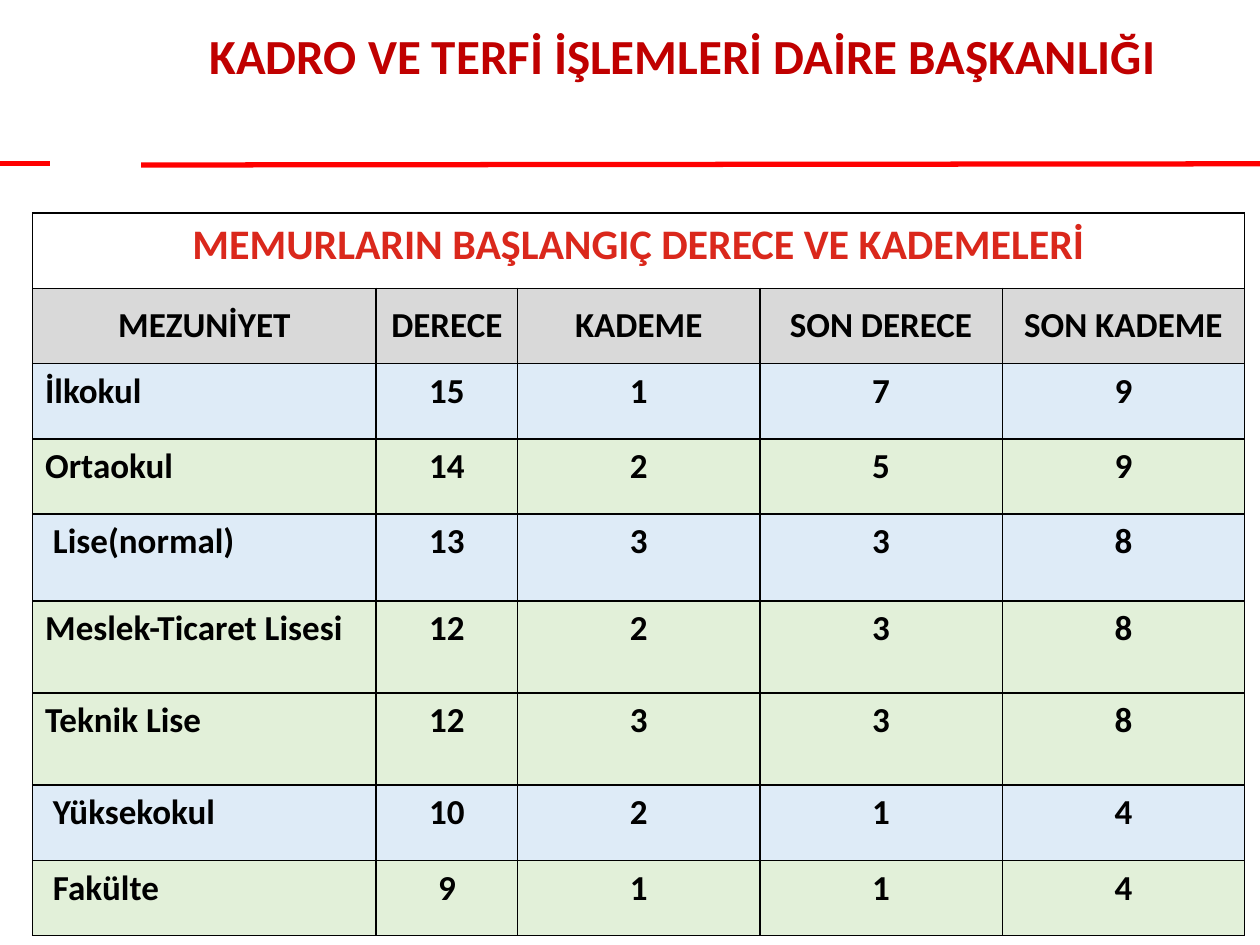
from typing import NamedTuple

from lxml import etree
from pptx import Presentation
from pptx.dml.color import RGBColor
from pptx.enum import shapes, text
from pptx.oxml import ns
from pptx.util import Pt

FONT = "Calibri"
BLACK, GREY, BLUE, GREEN = "000000", "D9D9D9", "DEEBF7", "E2F0D9"
CENTER, LEFT = text.PP_ALIGN.CENTER, text.PP_ALIGN.LEFT
TOP, MIDDLE = text.MSO_ANCHOR.TOP, text.MSO_ANCHOR.MIDDLE
CELL_MARGIN = 7.2


class Level(NamedTuple):
    """One school level with its starting and final grades."""
    school: str
    grades: tuple[int, int, int, int]
    fill: str
    height: float = 43
    indent: float = 0


class Rule(NamedTuple):
    start: tuple[float, float]
    end: tuple[float, float]


TABLE_TITLE = "MEMURLARIN BAŞLANGIÇ DERECE VE KADEMELERİ"
HEADINGS = ["MEZUNİYET", "DERECE", "KADEME", "SON DERECE", "SON KADEME"]
COLUMN_WIDTHS = [196.4, 80.8, 138.5, 138.5, 138.5]
HEADER_HEIGHT = 43
LEVELS = [
    Level("İlkokul", (15, 1, 7, 9), BLUE),
    Level("Ortaokul", (14, 2, 5, 9), GREEN),
    Level("Lise(normal)", (13, 3, 3, 8), BLUE, height=49.8, indent=4.5),
    Level("Meslek-Ticaret Lisesi", (12, 2, 3, 8), GREEN, height=52.6),
    Level("Teknik Lise", (12, 3, 3, 8), GREEN, height=52.6),
    Level("Yüksekokul", (10, 2, 1, 4), BLUE, indent=4.5),
    Level("Fakülte", (9, 1, 1, 4), GREEN, indent=4.5),
]
RULES = [Rule((80.6, 94.3), (720, 93.6)), Rule((0, 93.6), (28.8, 93.6))]


def color(value: str) -> RGBColor:
    return RGBColor.from_string(value)


def write(frame, words: str, size: float, ink: str, align=CENTER) -> None:
    para = frame.paragraphs[0]
    para.alignment = align
    span = para.add_run()
    span.text = words
    span.font.name = FONT
    span.font.size = Pt(size)
    span.font.bold = True
    span.font.color.rgb = color(ink)


def add_borders(cell) -> None:
    """Draw 1 pt black lines on all sides; call before filling the cell."""
    properties = cell._tc.get_or_add_tcPr()
    for side in ("a:lnL", "a:lnR", "a:lnT", "a:lnB"):
        line = etree.SubElement(properties, ns.qn(side), w=str(Pt(1)))
        fill = etree.SubElement(line, ns.qn("a:solidFill"))
        etree.SubElement(fill, ns.qn("a:srgbClr"), val=BLACK)


def fill_cell(cell, words: str, fill: str, align=CENTER, anchor=TOP,
              indent: float = 0) -> None:
    cell.fill.solid()
    cell.fill.fore_color.rgb = color(fill)
    cell.vertical_anchor = anchor
    cell.margin_left = Pt(CELL_MARGIN + indent)
    write(cell.text_frame, words, 20, BLACK, align)


def add_grade_table(page) -> None:
    heights = [HEADER_HEIGHT] * 2 + [level.height for level in LEVELS]
    table = page.shapes.add_table(
        len(heights), len(HEADINGS), Pt(18.6), Pt(121.8),
        Pt(sum(COLUMN_WIDTHS)), Pt(sum(heights))).table
    table.first_row = table.horz_banding = False
    for column, width in zip(table.columns, COLUMN_WIDTHS):
        column.width = Pt(width)
    for row, height in zip(table.rows, heights):
        row.height = Pt(height)
    for cell in table.iter_cells():
        add_borders(cell)

    title = table.cell(0, 0)
    title.merge(table.cell(0, len(HEADINGS) - 1))
    title.fill.background()
    write(title.text_frame, TABLE_TITLE, 24, "DA281C")
    for index, heading in enumerate(HEADINGS):
        fill_cell(table.cell(1, index), heading, GREY, anchor=MIDDLE)
    for row, level in enumerate(LEVELS, start=2):
        fill_cell(table.cell(row, 0), level.school, level.fill, LEFT,
                  indent=level.indent)
        for index, grade in enumerate(level.grades, start=1):
            fill_cell(table.cell(row, index), str(grade), level.fill)


def add_page_title(page) -> None:
    box = page.shapes.add_textbox(Pt(99.4), Pt(10.8), Pt(581), Pt(41))
    box.text_frame.word_wrap = True
    box.text_frame.auto_size = text.MSO_AUTO_SIZE.SHAPE_TO_FIT_TEXT
    write(box.text_frame, "KADRO VE TERFİ İŞLEMLERİ DAİRE BAŞKANLIĞI", 28, "C00000")


def add_rule(page, rule: Rule) -> None:
    line = page.shapes.add_connector(
        shapes.MSO_CONNECTOR.STRAIGHT, *map(Pt, rule.start + rule.end))
    line.line.color.rgb = color("FF0000")
    line.line.width = Pt(3)
    etree.SubElement(line._element.spPr, ns.qn("a:effectLst"))


def main() -> None:
    deck = Presentation()
    deck.slide_width, deck.slide_height = Pt(720), Pt(540)
    page = deck.slides.add_slide(deck.slide_layouts[6])
    add_grade_table(page)
    add_page_title(page)
    for rule in RULES:
        add_rule(page, rule)
    deck.save("out.pptx")


if __name__ == "__main__":
    main()
